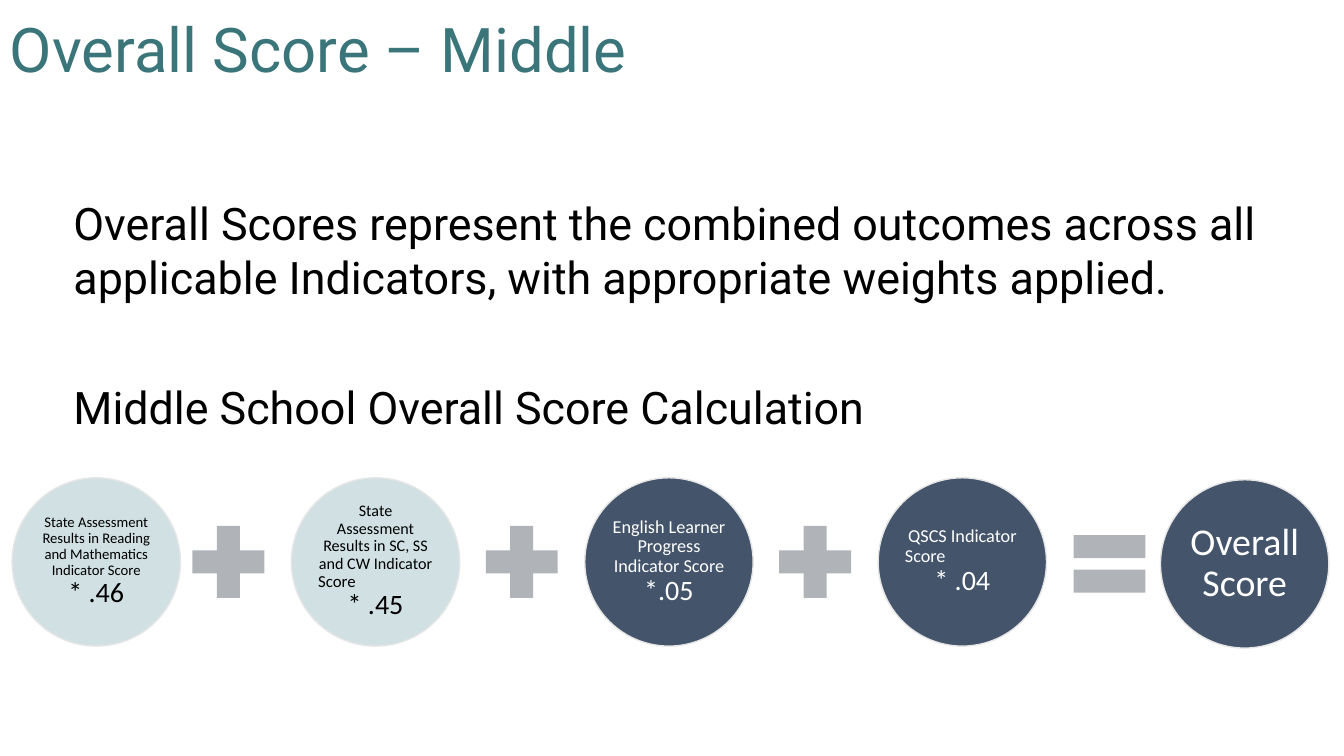
from pptx import Presentation
from pptx.dml.color import RGBColor
from pptx.enum.shapes import MSO_SHAPE
from pptx.enum.text import MSO_ANCHOR, PP_ALIGN
from pptx.util import Inches, Pt

presentation = Presentation()
presentation.slide_width = Inches(13.33)
presentation.slide_height = Inches(7.5)
slide = presentation.slides.add_slide(presentation.slide_layouts[6])

LEFT, CENTER = PP_ALIGN.LEFT, PP_ALIGN.CENTER
PALE, NAVY, GRAY, EDGE = "D0E0E3", "44546A", "B0B4B9", "E7E6E6"
BLACK, WHITE, TEAL = "000000", "FFFFFF", "3A757A"


def add_text(box, lines, font, color, inset=None, spacing=1.0):
    """Each line is a paragraph: text, size, alignment, space before."""
    left, top, width, height = box
    frame = slide.shapes.add_textbox(
        Inches(left), Inches(top), Inches(width), Inches(height)).text_frame
    frame.word_wrap = True
    if inset is not None:
        frame.margin_left = frame.margin_right = Inches(inset)
        frame.margin_top = frame.margin_bottom = Inches(inset)
    for index, (text, size, alignment, before) in enumerate(lines):
        paragraph = frame.add_paragraph() if index else frame.paragraphs[0]
        paragraph.alignment = alignment
        paragraph.line_spacing = spacing
        paragraph.space_before = Pt(before)
        run = paragraph.add_run()
        run.text = text
        run.font.name = font
        run.font.size = Pt(size)
        run.font.color.rgb = RGBColor.from_string(color)
    return frame


def add_shape(preset, left, top, size, fill, edge=None):
    shape = slide.shapes.add_shape(
        preset, Inches(left), Inches(top), Inches(size), Inches(size))
    shape.shadow.inherit = False
    shape.fill.solid()
    shape.fill.fore_color.rgb = RGBColor.from_string(fill)
    if edge:
        shape.line.color.rgb = RGBColor.from_string(edge)
        shape.line.width = Pt(1)
    else:
        shape.line.fill.background()


# Title
title = add_text((0, -0.2, 11.5, 1.45), [("Overall Score – Middle", 44, LEFT, 0)],
                 "Roboto", TEAL, spacing=0.9)
title.vertical_anchor = MSO_ANCHOR.MIDDLE

# Formula: circles on an even pitch, the outer two pulled to the slide's edges
PITCH, CIRCLE, OPERATOR, INNER = 2.91, 1.67, 0.97, 1.18
SECOND, ROW_TOP = 2.89, 4.74
PLUS, EQUAL = MSO_SHAPE.MATH_PLUS, MSO_SHAPE.MATH_EQUAL

# Circle left, top offset, fill, text colour, inset, operator before, its gap, lines
terms = [
    (0.12, 0, PALE, BLACK, 0.02, None, 0, [
        ("State Assessment Results in Reading and Mathematics Indicator Score",
         10.5, CENTER, 0),
        ("* .46", 20, CENTER, 0)]),
    (SECOND, 0, PALE, BLACK, 0.02, PLUS, 1.11, [
        ("State", 11.5, CENTER, 0),
        ("Assessment Results in SC, SS and CW Indicator", 11.5, CENTER, 0),
        ("Score", 12, LEFT, 0),
        ("* .45", 20, CENTER, 0)]),
    (SECOND + PITCH, 0, NAVY, WHITE, 0.02, PLUS, 1.11, [
        ("English Learner Progress Indicator Score", 13, CENTER, 0),
        ("*.05", 20, CENTER, 0)]),
    (SECOND + 2 * PITCH, 0, NAVY, WHITE, 0.02, PLUS, 1.11, [
        ("QSCS Indicator", 13, CENTER, 0),
        ("Score", 13, LEFT, 0),
        ("* .04", 20, CENTER, 0)]),
    (11.51, 0.02, NAVY, WHITE, 0.04, EQUAL, 0.99, [
        ("Overall Score", 27, CENTER, 0)]),
]
for left, drop, fill, color, inset, operator, gap, lines in terms:
    top = ROW_TOP + drop
    if operator:
        add_shape(operator, left - gap, top + (CIRCLE - OPERATOR) / 2, OPERATOR, GRAY)
    add_shape(MSO_SHAPE.OVAL, left, top, CIRCLE, fill, EDGE)
    margin = (CIRCLE - INNER) / 2
    label = add_text((left + margin, top + margin, INNER, INNER), lines,
                     "Calibri", color, inset, 0.9)
    label.vertical_anchor = MSO_ANCHOR.MIDDLE

# Explanation and formula heading
add_text((0.63, 1.89, 12.01, 2.48), [
    ("Overall Scores represent the combined outcomes across all applicable "
     "Indicators, with appropriate weights applied.", 32, LEFT, 0),
    ("Middle School Overall Score Calculation", 32, LEFT, 55),
], "Roboto", BLACK)

presentation.save("out.pptx")
